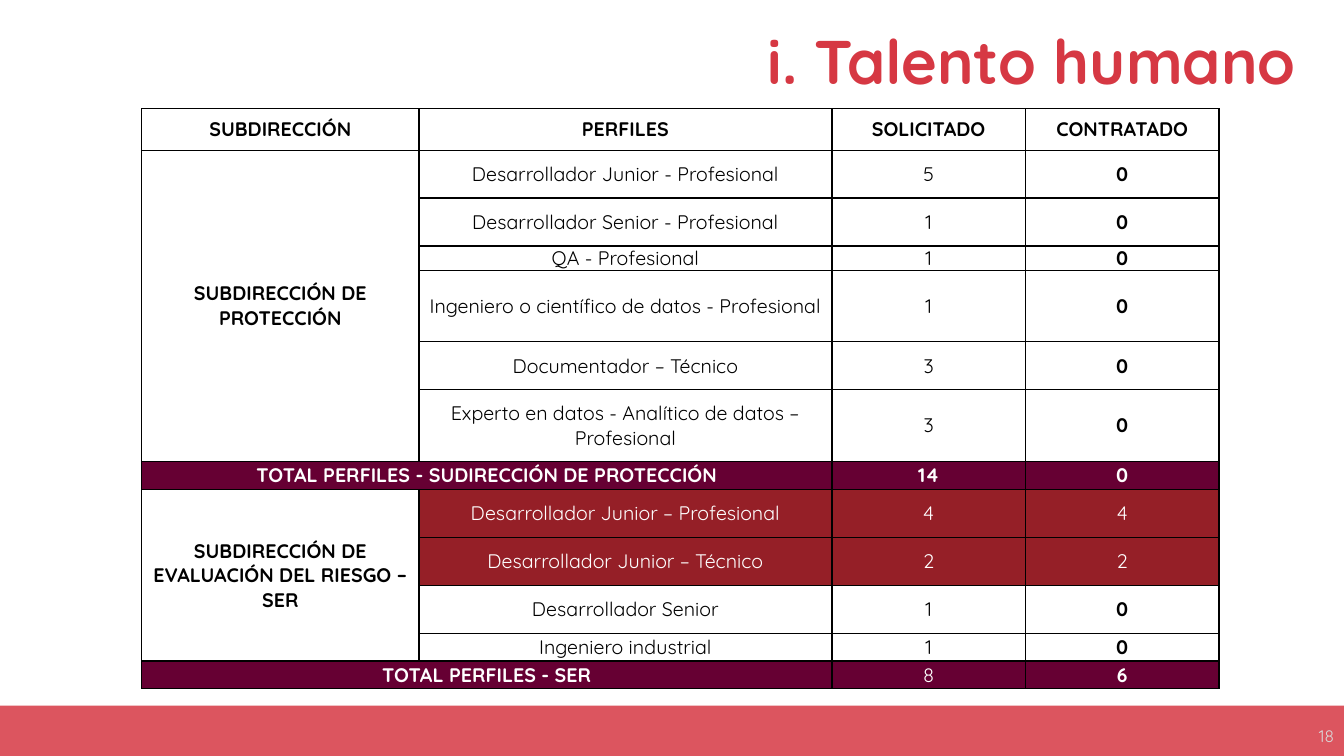
from dataclasses import dataclass

from lxml.etree import SubElement
from pptx import Presentation
from pptx.dml.color import RGBColor
from pptx.enum.shapes import MSO_SHAPE
from pptx.enum.text import MSO_ANCHOR, PP_ALIGN
from pptx.oxml.ns import qn
from pptx.util import Pt


@dataclass(frozen=True)
class Theme:
    font: str = "Quicksand"
    accent: str = "D63843"
    ink: str = "000000"
    white: str = "FFFFFF"
    muted: str = "D9D9D9"
    total: str = "660033"
    hired: str = "951F27"
    title_size: int = 44
    cell_size: int = 14
    number_size: int = 12


@dataclass(frozen=True)
class RowStyle:
    fill: str | None
    color: str
    bold: tuple


class Deck:
    def __init__(self, prs, theme):
        self.theme = theme
        self.slide = prs.slides.add_slide(prs.slide_layouts[6])

    def put_text(self, tf, text, size, color, bold=False, align=PP_ALIGN.CENTER, spacing=None):
        p = tf.paragraphs[0]
        p.alignment = align
        p.line_spacing = spacing
        r = p.add_run()
        r.text = text
        r.font.name = self.theme.font
        r.font.size = Pt(size)
        r.font.bold = bold
        r.font.color.rgb = RGBColor.from_string(color)

    def text_box(self, box, text, size, color, **style):
        tf = self.slide.shapes.add_textbox(*map(Pt, box)).text_frame
        tf.word_wrap = True
        tf.vertical_anchor = MSO_ANCHOR.MIDDLE
        self.put_text(tf, text, size, color, align=PP_ALIGN.RIGHT, **style)

    def band(self, box, color, opacity):
        sp = self.slide.shapes.add_shape(MSO_SHAPE.RECTANGLE, *map(Pt, box))
        sp.shadow.inherit = False
        sp.line.fill.background()
        sp.fill.solid()
        sp.fill.fore_color.rgb = RGBColor.from_string(color)
        clr = sp._element.spPr.find(qn("a:solidFill"))[0]
        SubElement(clr, qn("a:alpha"), val=str(opacity * 1000))

    def style_cell(self, cell, fill):
        cell.margin_left = cell.margin_right = cell.margin_top = cell.margin_bottom = 0
        cell.vertical_anchor = MSO_ANCHOR.MIDDLE
        tc_pr = cell._tc.get_or_add_tcPr()
        for side in ("lnL", "lnR", "lnT", "lnB"):
            ln = SubElement(tc_pr, qn(f"a:{side}"), w=str(Pt(1)))
            SubElement(SubElement(ln, qn("a:solidFill")), qn("a:srgbClr"), val=self.theme.ink)
        if fill:
            cell.fill.solid()
            cell.fill.fore_color.rgb = RGBColor.from_string(fill)
        else:
            cell.fill.background()

    def table(self, left, top, widths, rows):
        heights = [row[1] for row in rows]
        box = (left, top, sum(widths), sum(heights))
        tbl = self.slide.shapes.add_table(len(rows), len(widths), *map(Pt, box)).table
        tbl.first_row = tbl.horz_banding = False
        for col, width in zip(tbl.columns, widths):
            col.width = Pt(width)
        for i, (style, height, *values) in enumerate(rows):
            tbl.rows[i].height = Pt(height)
            for j, value in enumerate(values):
                # Group names stay plain beside the hired profiles
                plain = j == 0 and style is HIRED
                cell = tbl.cell(i, j)
                self.style_cell(cell, None if plain else style.fill)
                if value is not None:
                    color = self.theme.ink if plain else style.color
                    self.put_text(cell.text_frame, value, self.theme.cell_size, color, style.bold[j])
        # An empty profile joins the cell on its left; an empty group joins the one above
        start = 0
        for i, (_, _, group, profile, *_) in enumerate(rows):
            if profile is None:
                tbl.cell(i, 0).merge(tbl.cell(i, 1))
            if group is not None:
                start = i
            elif i + 1 == len(rows) or rows[i + 1][2] is not None:
                tbl.cell(start, 0).merge(tbl.cell(i, 0))


THEME = Theme()
ALL_BOLD = (True, True, True, True)
ENDS_BOLD = (True, False, False, True)
HEAD = RowStyle(None, THEME.ink, ALL_BOLD)
OPEN = RowStyle(None, THEME.ink, ENDS_BOLD)
HIRED = RowStyle(THEME.hired, THEME.white, (True, False, False, False))
TOTAL = RowStyle(THEME.total, THEME.white, ALL_BOLD)
TOTAL_SER = RowStyle(THEME.total, THEME.white, ENDS_BOLD)

COLUMNS = (198, 295, 138.25, 138.25)
LINE, MID, TALL = 17.5, 34.25, 51
# Style, height, group, profile, requested, hired
ROWS = [
    (HEAD, 29.5, "SUBDIRECCIÓN", "PERFILES", "SOLICITADO", "CONTRATADO"),
    (OPEN, MID, "SUBDIRECCIÓN DE PROTECCIÓN", "Desarrollador Junior - Profesional", "5", "0"),
    (OPEN, MID, None, "Desarrollador Senior - Profesional", "1", "0"),
    (OPEN, LINE, None, "QA - Profesional", "1", "0"),
    (OPEN, TALL, None, "Ingeniero o científico de datos - Profesional", "1", "0"),
    (OPEN, MID, None, "Documentador – Técnico", "3", "0"),
    (OPEN, TALL, None, "Experto en datos - Analítico de datos – Profesional", "3", "0"),
    (TOTAL, 20.25, "TOTAL PERFILES - SUDIRECCIÓN DE PROTECCIÓN", None, "14", "0"),
    (HIRED, MID, "SUBDIRECCIÓN DE EVALUACIÓN DEL RIESGO –SER",
     "Desarrollador Junior – Profesional", "4", "4"),
    (HIRED, MID, None, "Desarrollador Junior – Técnico", "2", "2"),
    (OPEN, MID, None, "Desarrollador Senior", "1", "0"),
    (OPEN, 19.75, None, "Ingeniero industrial", "1", "0"),
    (TOTAL_SER, 19.75, "TOTAL PERFILES - SER", None, "8", "6"),
]


def main():
    prs = Presentation()
    prs.slide_width, prs.slide_height = Pt(960), Pt(540)
    deck = Deck(prs, THEME)

    # Footer band
    deck.band((-12, 504, 985, 44.5), THEME.accent, 85)

    # Title and slide number
    deck.text_box((105, -6, 828, 104.5), "i. Talento humano", THEME.title_size, THEME.accent,
                  bold=True, spacing=0.9)
    deck.text_box((744, 511.5, 216, 28.75), "18", THEME.number_size, THEME.muted)

    # Staffing table
    deck.table(101.25, 77.75, COLUMNS, ROWS)

    prs.save("out.pptx")


if __name__ == "__main__":
    main()
